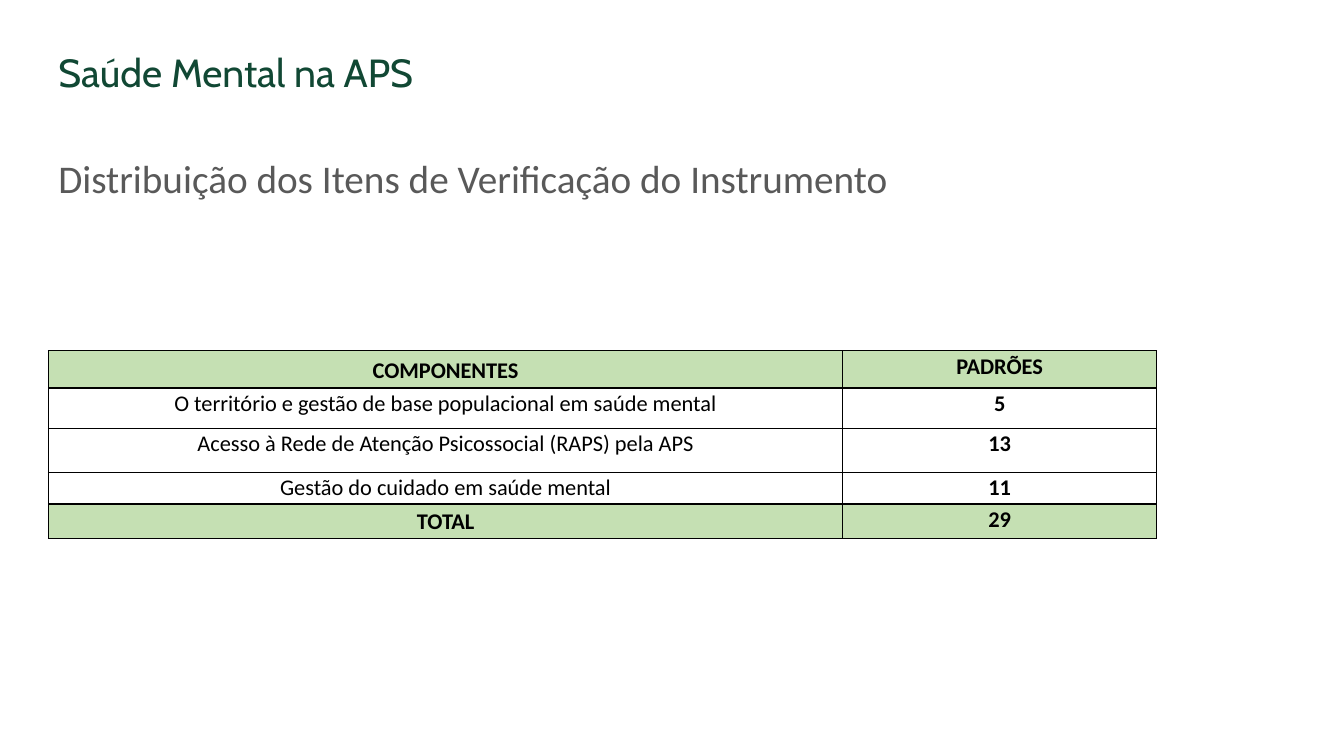
from lxml import etree
from pptx import Presentation
from pptx.dml.color import RGBColor
from pptx.enum.text import MSO_ANCHOR, PP_ALIGN
from pptx.oxml.ns import qn
from pptx.util import Emu, Pt

EMU_PER_PX = 9144
GREEN = "114834"
GRAY = "595959"
BLACK = "000000"
BAND = "C5E0B3"

ROWS = [
    ("COMPONENTES", "PADRÕES"),
    ("O território e gestão de base populacional em saúde mental", "5"),
    ("Acesso à Rede de Atenção Psicossocial (RAPS) pela APS", "13"),
    ("Gestão do cuidado em saúde mental", "11"),
    ("TOTAL", "29"),
]
COLUMN_WIDTHS = (788, 311)
ROW_HEIGHTS = (37, 40, 44, 31, 34)


def px(length):
    return Emu(length * EMU_PER_PX)


def color(value):
    return RGBColor.from_string(value)


def style_text(para, font, size, text_color, bold=False):
    for span in para.runs:
        span.font.name = font
        span.font.size = Pt(size)
        span.font.bold = bold
        span.font.color.rgb = color(text_color)


def add_heading(page, area, text, font, text_color, anchor, spacing):
    box = page.shapes.add_textbox(*map(px, area))
    frame = box.text_frame
    frame.word_wrap = True
    frame.vertical_anchor = anchor
    frame.text = text
    para = frame.paragraphs[0]
    para.line_spacing = spacing
    style_text(para, font, 28, text_color)


def add_borders(cell):
    """Draw a thin black line on all four sides; call before setting the fill."""
    properties = cell._tc.get_or_add_tcPr()
    for side in ("a:lnL", "a:lnR", "a:lnT", "a:lnB"):
        line = etree.SubElement(properties, qn(side), w=str(Pt(1)))
        fill = etree.SubElement(line, qn("a:solidFill"))
        etree.SubElement(fill, qn("a:srgbClr"), val=BLACK)


def fill_cell(cell, text, banded, bold, middle):
    add_borders(cell)
    if banded:
        cell.fill.solid()
        cell.fill.fore_color.rgb = color(BAND)
    else:
        cell.fill.background()
    cell.margin_left = cell.margin_right = px(5)
    cell.margin_top = cell.margin_bottom = 0
    cell.vertical_anchor = MSO_ANCHOR.MIDDLE if middle else MSO_ANCHOR.TOP
    cell.text_frame.text = text
    para = cell.text_frame.paragraphs[0]
    para.alignment = PP_ALIGN.CENTER
    para.line_spacing = 1.07
    para.space_after = Pt(8)
    style_text(para, "Calibri", 16, BLACK, bold)


def add_components_table(page, left, top):
    frame = page.shapes.add_table(
        len(ROWS), len(COLUMN_WIDTHS), px(left), px(top),
        px(sum(COLUMN_WIDTHS)), px(sum(ROW_HEIGHTS)))
    table = frame.table
    table.first_row = table.horz_banding = False
    for column, width in zip(table.columns, COLUMN_WIDTHS):
        column.width = px(width)
    for row, height in zip(table.rows, ROW_HEIGHTS):
        row.height = px(height)
    for r, texts in enumerate(ROWS):
        banded = r in (0, len(ROWS) - 1)
        for c, text in enumerate(texts):
            fill_cell(table.cell(r, c), text, banded,
                      bold=banded or c == 1, middle=banded and c == 0)


def main():
    deck = Presentation()
    deck.slide_width, deck.slide_height = px(1333), px(750)
    page = deck.slides.add_slide(deck.slide_layouts[6])
    add_heading(page, (48, 43, 708, 57), "Saúde Mental na APS",
                "Cabin", GREEN, MSO_ANCHOR.TOP, 1.0)
    add_heading(page, (48, 107, 1099, 145),
                "Distribuição dos Itens de Verificação do Instrumento",
                "Calibri", GRAY, MSO_ANCHOR.MIDDLE, 0.9)
    add_components_table(page, 48, 348)
    deck.save("out.pptx")


if __name__ == "__main__":
    main()
